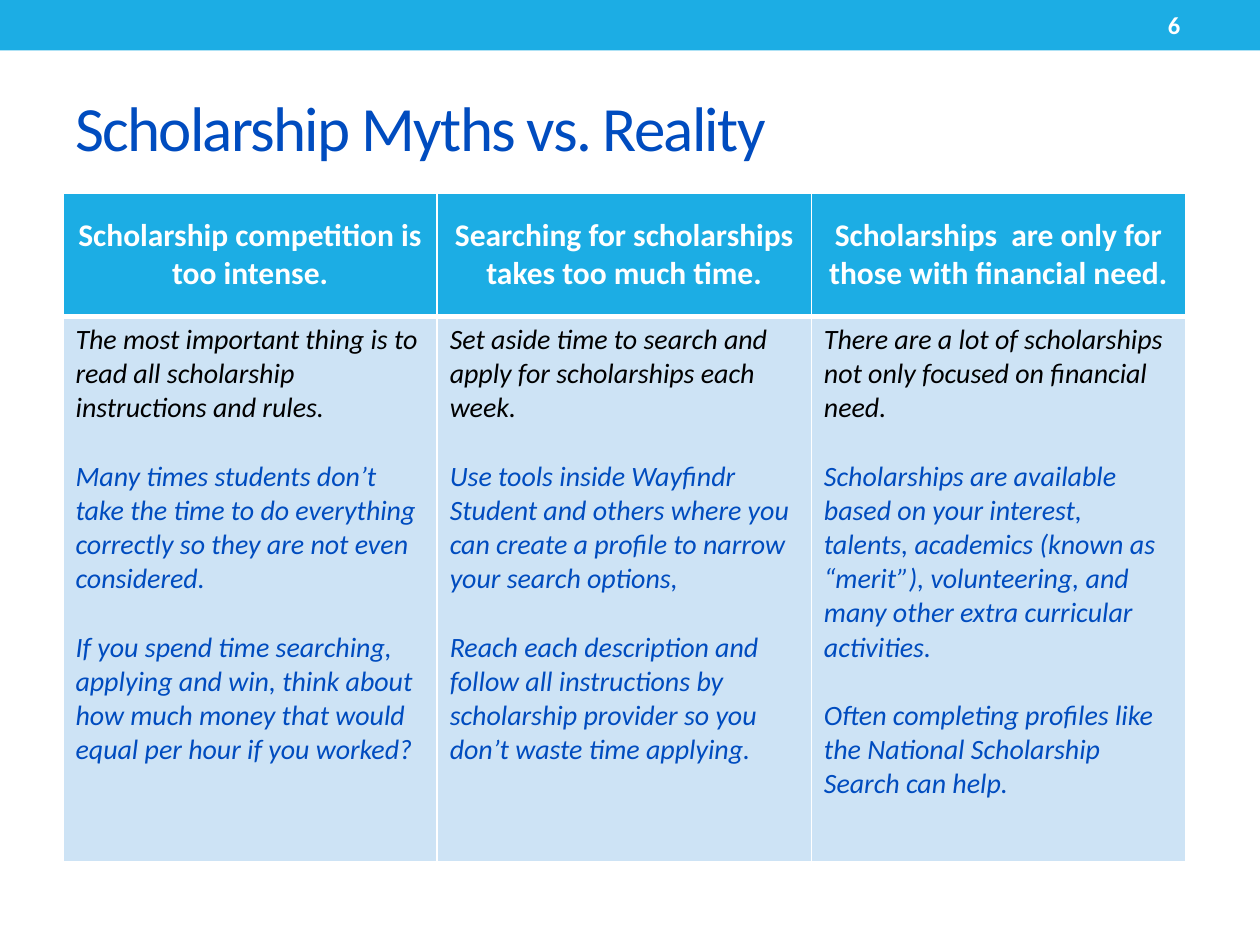
"""Build the slide that sets scholarship myths against reality."""
from lxml.etree import SubElement
from pptx import Presentation
from pptx.dml.color import RGBColor
from pptx.enum.shapes import MSO_SHAPE as Shape
from pptx.enum.text import MSO_ANCHOR as Anchor, PP_ALIGN as Align
from pptx.oxml.ns import qn
from pptx.util import Inches, Pt

SKY = RGBColor(0x1C, 0xAD, 0xE4)
PALE = RGBColor(0xCD, 0xE3, 0xF5)
BLUE = RGBColor(0x00, 0x4C, 0xBF)
BLACK = RGBColor(0, 0, 0)
WHITE = RGBColor(0xFF, 0xFF, 0xFF)

TITLE = "Scholarship Myths vs. Reality"
NUMBER = "6"
MYTHS = [
    ("Scholarship competition is too intense.", [
        "The most important thing is to read all scholarship instructions and rules.",
        "Many times students don’t take the time to do everything correctly so they are not even considered.",
        "If you spend time searching, applying and win, think about how much money that would equal per hour "
        "if you worked?"]),
    ("Searching for scholarships takes too much time.", [
        "Set aside time to search and apply for scholarships each week.",
        "Use tools inside Wayfindr Student and others where you can create a profile to narrow your search options,",
        "Reach each description and follow all instructions by scholarship provider so you don’t waste time "
        "applying."]),
    ("Scholarships  are only for those with financial need.", [
        "There are a lot of scholarships not only focused on financial need.",
        "Scholarships are available based on your interest, talents, academics (known as “merit”), volunteering, "
        "and many other extra curricular activities.",
        "Often completing profiles like the National Scholarship Search can help."]),
]

MARGIN = 0.5
COL_W = 2.97
ROWS = (0.98, 4.33)
TABLE_TOP = 1.53
BAR_H = 0.4
PARAGRAPH_GAP = 19.5


def write(tf, text, size, color, bold=False, italic=False, align=Align.LEFT, before=0, spacing=None):
    p = tf.paragraphs[0] if not tf.text else tf.add_paragraph()
    p.alignment = align
    p.space_before = Pt(before)
    r = p.add_run()
    r.text = text
    f = r.font
    f.name, f.size, f.bold, f.italic = "Calibri", Pt(size), bold, italic
    f.color.rgb = color
    if spacing is not None:
        f._element.set("spc", str(spacing * 100))


def add_text(slide, box, text, **fmt):
    tf = slide.shapes.add_textbox(*map(Inches, box)).text_frame
    tf.word_wrap = True
    tf.vertical_anchor = Anchor.MIDDLE
    write(tf, text, **fmt)


def style_cell(cell, fill, **widths):
    tc_pr = cell._tc.get_or_add_tcPr()
    for side in "LRTB":
        ln = SubElement(tc_pr, qn(f"a:ln{side}"), w=str(Pt(widths.get(side, 1))))
        SubElement(SubElement(ln, qn("a:solidFill")), qn("a:srgbClr"), val=str(WHITE))
    cell.fill.solid()
    cell.fill.fore_color.rgb = fill


def add_myths(slide):
    table = slide.shapes.add_table(
        len(ROWS), len(MYTHS), Inches(MARGIN), Inches(TABLE_TOP),
        Inches(COL_W * len(MYTHS)), Inches(sum(ROWS))).table
    table.horz_banding = False
    for row, height in zip(table.rows, ROWS):
        row.height = Inches(height)
    for i, (myth, reality) in enumerate(MYTHS):
        table.columns[i].width = Inches(COL_W)
        head, body = table.cell(0, i), table.cell(1, i)
        style_cell(head, SKY, B=3)
        style_cell(body, PALE, T=3)
        head.vertical_anchor = Anchor.MIDDLE
        write(head.text_frame, myth, 18, WHITE, bold=True, align=Align.CENTER)
        for j, text in enumerate(reality):
            write(body.text_frame, text, 16, BLUE if j else BLACK, italic=True,
                  before=PARAGRAPH_GAP if j else 0)


def main():
    prs = Presentation()
    prs.slide_width, prs.slide_height = Inches(10), Inches(7.5)
    slide = prs.slides.add_slide(prs.slide_layouts[6])
    bar = slide.shapes.add_shape(Shape.RECTANGLE, 0, 0, prs.slide_width, Inches(BAR_H))
    bar.shadow.inherit = False
    bar.fill.solid()
    bar.fill.fore_color.rgb = SKY
    bar.line.fill.background()
    add_text(slide, (MARGIN, 0, 10 - 2 * MARGIN, 2), TITLE, size=36, color=BLUE, spacing=-1)
    add_text(slide, (9.17, 0.02, 0.33, 0.36), NUMBER, size=14, color=WHITE, bold=True)
    add_myths(slide)
    prs.save("out.pptx")


if __name__ == "__main__":
    main()
